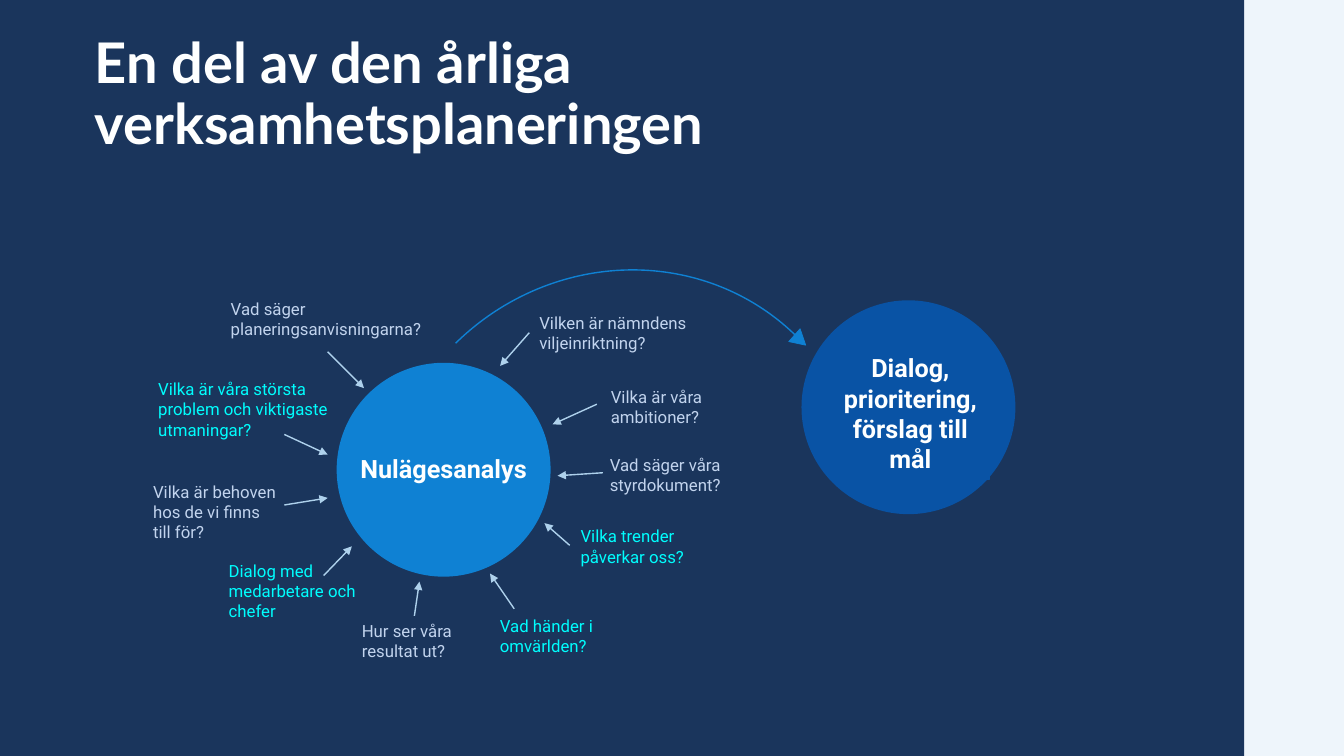
import dataclasses

import lxml.etree
import pptx
import pptx.dml.color
import pptx.enum.shapes
import pptx.enum.text
import pptx.oxml.ns
import pptx.util

Inches = pptx.util.Inches
Pt = pptx.util.Pt
SHAPE = pptx.enum.shapes.MSO_SHAPE
ALIGN = pptx.enum.text.PP_ALIGN
ANCHOR = pptx.enum.text.MSO_ANCHOR


@dataclasses.dataclass(frozen=True)
class Theme:
    backdrop: str = "EEF5FB"
    panel: str = "1A355C"
    white: str = "FEFFFF"
    question: str = "C2D4EE"
    highlight: str = "00FEFE"
    analysis: str = "0F81D3"
    dialogue: str = "0953A5"
    arrow: str = "AED1EC"
    title_font: str = "Lato"
    body_font: str = "Roboto"
    title_size: int = 40
    circle_size: int = 18
    question_size: int = 12


THEME = Theme()
CIRCLE_DIAMETER = 2.08

# text, highlighted, text box, arrow start, arrow end
QUESTIONS = [
    ("Vad säger planeringsanvisningarna?", False, (2.19, 2.91, 2.33, 0.5), (3.25, 3.49), (3.61, 3.85)),
    ("Vilka är våra största problem och viktigaste utmaningar?", True,
     (1.47, 3.71, 2.06, 0.71), (2.82, 4.31), (3.25, 4.51)),
    ("Vilka är behoven hos de vi finns till för?", False, (1.42, 4.73, 1.46, 0.71), (2.82, 5.01), (3.25, 4.94)),
    ("Dialog med medarbetare och chefer", True, (2.17, 5.51, 1.46, 0.73), (3.21, 5.71), (3.49, 5.42)),
    ("Hur ser våra resultat ut?", False, (3.49, 6.11, 1.24, 0.5), (4.11, 6.11), (4.16, 5.77)),
    ("Vad händer i omvärlden?", True, (4.86, 6.06, 1.94, 0.5), (5.1, 6.04), (4.86, 5.69)),
    ("Vilka trender påverkar oss?", True, (5.66, 5.17, 1.73, 0.5), (5.65, 5.41), (5.4, 5.19)),
    ("Vad säger våra styrdokument?", False, (5.95, 4.46, 2.3, 0.5), (5.98, 4.69), (5.53, 4.72)),
    ("Vilka är våra\nambitioner?", False, (5.96, 3.79, 5, 0.5), (5.92, 4.01), (5.48, 4.21)),
    ("Vilken är nämndens viljeinriktning?", False, (5.25, 3.05, 2.28, 0.5), (5.25, 3.3), (4.96, 3.63)),
]


def rgb(value):
    return pptx.dml.color.RGBColor.from_string(value)


def lengths(box):
    return [Inches(value) for value in box]


def add_shape(page, kind, box, fill=None, line=None, line_width=1, rotation=0):
    shape = page.shapes.add_shape(kind, *lengths(box))
    shape.shadow.inherit = False
    shape.rotation = rotation
    if fill:
        shape.fill.solid()
        shape.fill.fore_color.rgb = rgb(fill)
    else:
        shape.fill.background()
    if line:
        shape.line.color.rgb = rgb(line)
        shape.line.width = Pt(line_width)
    else:
        shape.line.fill.background()
    return shape


def write_text(shape, text, size, color, font, bold=False, align=ALIGN.LEFT, anchor=ANCHOR.TOP):
    """Fill the shape with one paragraph; a newline becomes a line break."""
    frame = shape.text_frame
    frame.word_wrap = True
    frame.vertical_anchor = anchor
    para = frame.paragraphs[0]
    para.alignment = align
    for index, line in enumerate(text.split("\n")):
        if index:
            para.add_line_break()
        span = para.add_run()
        span.text = line
        span.font.size = Pt(size)
        span.font.name = font
        span.font.bold = bold
        span.font.color.rgb = rgb(color)
    return para


def add_arrow(page, start, end):
    arrow = page.shapes.add_connector(
        pptx.enum.shapes.MSO_CONNECTOR.STRAIGHT, *lengths(start + end))
    arrow.line.color.rgb = rgb(THEME.arrow)
    arrow.line.width = Pt(1)
    qn = pptx.oxml.ns.qn
    properties = arrow.element.spPr
    lxml.etree.SubElement(properties.find(qn("a:ln")), qn("a:tailEnd"), type="triangle")
    lxml.etree.SubElement(properties, qn("a:effectLst"))


def add_title(page, box):
    title = page.shapes.add_textbox(*lengths(box))
    frame = title.text_frame
    frame.margin_left = frame.margin_right = frame.margin_top = frame.margin_bottom = 0
    para = write_text(title, "En del av den årliga verksamhetsplaneringen", THEME.title_size,
                      THEME.white, THEME.title_font, bold=True, anchor=ANCHOR.BOTTOM)
    para.line_spacing = 0.9


def add_circle(page, left, top, color, label, label_box):
    """Draw a circle with its label box placed relative to the circle's corner."""
    add_shape(page, SHAPE.OVAL, (left, top, CIRCLE_DIAMETER, CIRCLE_DIAMETER), color, color, 3)
    across, down, width, height = label_box
    caption = add_shape(page, SHAPE.RECTANGLE, (left + across, top + down, width, height), color, color, 0.75)
    write_text(caption, label, THEME.circle_size, THEME.white, THEME.body_font,
               bold=True, align=ALIGN.CENTER)


def add_question(page, text, highlighted, box, start, end):
    color = THEME.highlight if highlighted else THEME.question
    write_text(page.shapes.add_textbox(*lengths(box)), text, THEME.question_size, color, THEME.body_font)
    add_arrow(page, start, end)


def add_curved_arrow(page, arc_box, head_box):
    add_shape(page, SHAPE.ARC, arc_box, line=THEME.analysis, rotation=315.5)
    add_shape(page, SHAPE.ISOSCELES_TRIANGLE, head_box, THEME.analysis, THEME.analysis, 0.5, rotation=131.5)


def build_planning_page(deck):
    page = deck.slides.add_slide(deck.slide_layouts[6])
    page.background.fill.solid()
    page.background.fill.fore_color.rgb = rgb(THEME.backdrop)
    add_shape(page, SHAPE.RECTANGLE, (0, 0, 12.34, 7.5), THEME.panel)
    add_title(page, (0.94, 0.34, 10.47, 1.21))
    add_circle(page, 7.97, 3, THEME.dialogue, "Dialog, prioritering, förslag till mål", (0.28, 0.45, 1.56, 1.31))
    add_circle(page, 3.36, 3.62, THEME.analysis, "Nulägesanalys", (0.09, 0.83, 1.9, 0.4))
    for question in QUESTIONS:
        add_question(page, *question)
    add_curved_arrow(page, (3.71, 2.73, 4.92, 4.71), (7.85, 3.3, 0.17, 0.15))


def main():
    deck = pptx.Presentation()
    deck.slide_width = Inches(13.33)
    deck.slide_height = Inches(7.5)
    build_planning_page(deck)
    deck.save("out.pptx")


if __name__ == "__main__":
    main()
